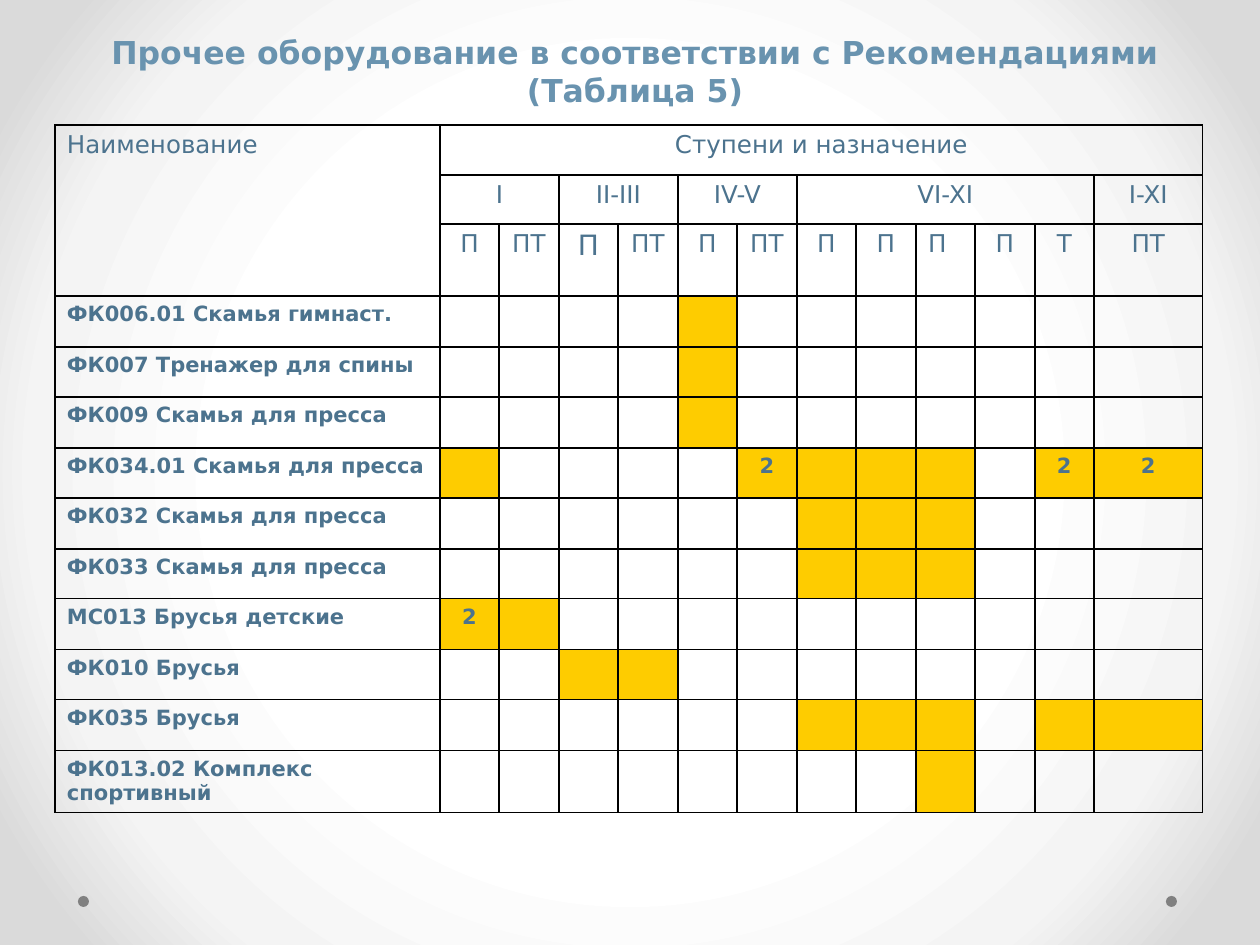
import pptx
import pptx.util
import pptx.dml.color
import pptx.enum.shapes
import pptx.enum.text
import pptx.oxml
from lxml import etree

NS = "http://schemas.openxmlformats.org/drawingml/2006/main"
FONT = "DejaVu Sans"
INK = "4C738E"
GOLD = "FECC00"
COLS = [385] + [59, 60] * 5 + [59, 109]
ROWS = [50, 49, 72] + [51, 50] * 4 + [51, 62]
STAGES = [("I", 1, 2), ("II-III", 3, 4), ("IV-V", 5, 6),
          ("VI-XI", 7, 11), ("I-XI", 12, 12)]
KINDS = ["П", "ПТ", "П", "ПТ", "П", "ПТ", "П", "П", "П", "П", "Т", "ПТ"]
ITEMS = [
    ("ФК006.01 Скамья гимнаст.", "....x......."),
    ("ФК007 Тренажер для спины", "....x......."),
    ("ФК009 Скамья для пресса", "....x......."),
    ("ФК034.01 Скамья для пресса", "x....2xxx.22"),
    ("ФК032 Скамья для пресса", "......xxx..."),
    ("ФК033 Скамья для пресса", "......xxx..."),
    ("МС013 Брусья детские", "2x.........."),
    ("ФК010 Брусья", "..xx........"),
    ("ФК035 Брусья", "......xxx.xx"),
    ("ФК013.02 Комплекс спортивный", "........x..."),
]


def px(n):
    return pptx.util.Emu(round(n * 914400 / 126))


def tint(code):
    return pptx.dml.color.RGBColor.from_string(code)


def write(frame, text, size, bold=False, mid=True, ink=INK):
    para = frame.paragraphs[0]
    align = pptx.enum.text.PP_ALIGN
    para.alignment = align.CENTER if mid else align.LEFT
    run = para.add_run()
    run.text = text
    run.font.name = FONT
    run.font.size = pptx.util.Pt(size)
    run.font.bold = bold
    run.font.color.rgb = tint(ink)


def paint(slide):
    slide.background.fill.gradient()
    grad = slide.background.fill._fill._gradFill
    for child in list(grad):
        grad.remove(child)
    stops = etree.SubElement(grad, f"{{{NS}}}gsLst")
    for pos, code in [(50, "FFFFFF"), (76, "F4F4F4"), (92, "DADADA")]:
        stop = etree.SubElement(stops, f"{{{NS}}}gs", pos=str(pos * 1000))
        etree.SubElement(stop, f"{{{NS}}}srgbClr", val=code)
    shade = etree.SubElement(grad, f"{{{NS}}}path", {"path": "circle"})
    sides = dict.fromkeys("ltrb", "50000")
    etree.SubElement(shade, f"{{{NS}}}fillToRect", sides)


def dot(slide, left):
    kind = pptx.enum.shapes.MSO_SHAPE.OVAL
    shape = slide.shapes.add_shape(kind, px(left), px(896), px(11), px(11))
    shape.shadow.inherit = False
    shape.fill.solid()
    shape.fill.fore_color.rgb = tint("808080")
    shape.line.fill.background()


def head(slide):
    title = slide.shapes.title
    title.left, title.top = px(64), px(26)
    title.width, title.height = px(1142), px(90)
    frame = title.text_frame
    frame.word_wrap = True
    frame.auto_size = pptx.enum.text.MSO_AUTO_SIZE.NONE
    frame.vertical_anchor = pptx.enum.text.MSO_ANCHOR.MIDDLE
    write(frame, "Прочее оборудование в соответствии с Рекомендациями (Таблица 5)",
          18, bold=True, ink="6993AF")


def edge(cell):
    props = cell._tc.get_or_add_tcPr()
    for i, side in enumerate(["lnL", "lnR", "lnT", "lnB"]):
        line = pptx.oxml.parse_xml(
            f'<a:{side} xmlns:a="{NS}" w="12700"><a:solidFill>'
            f'<a:srgbClr val="000000"/></a:solidFill></a:{side}>')
        props.insert(i, line)


def blank(cell, first):
    if first:
        cell.margin_left = cell.margin_right = px(12)
    else:
        cell.margin_left = cell.margin_right = px(4)
    cell.margin_top = cell.margin_bottom = px(6)
    cell.fill.background()
    edge(cell)


def mark(cell, sign):
    if sign != ".":
        cell.fill.solid()
        cell.fill.fore_color.rgb = tint(GOLD)
    if sign == "2":
        write(cell.text_frame, sign, 12, bold=True)
    else:
        cell.margin_top = cell.margin_bottom = 0


def grid(slide):
    frame = slide.shapes.add_table(len(ROWS), len(COLS), px(55), px(125),
                                   px(sum(COLS)), px(sum(ROWS)))
    table = frame.table
    table.first_row = table.horz_banding = False
    for col, width in zip(table.columns, COLS):
        col.width = px(width)
    for row, height in zip(table.rows, ROWS):
        row.height = px(height)
        for i, cell in enumerate(row.cells):
            blank(cell, i == 0)
    return table


def top(table):
    name = table.cell(0, 0)
    name.merge(table.cell(2, 0))
    write(name.text_frame, "Наименование", 14, mid=False)
    span = table.cell(0, 1)
    span.merge(table.cell(0, 12))
    write(span.text_frame, "Ступени и назначение", 14)
    for text, start, end in STAGES:
        cell = table.cell(1, start)
        if end > start:
            cell.merge(table.cell(1, end))
        write(cell.text_frame, text, 14)
    for i, text in enumerate(KINDS, 1):
        write(table.cell(2, i).text_frame, text, 16 if i == 3 else 14)
    table.cell(2, 9).margin_right = px(20)


def body(table):
    for r, (name, signs) in enumerate(ITEMS, 3):
        write(table.cell(r, 0).text_frame, name, 12, bold=True, mid=False)
        for c, sign in enumerate(signs, 1):
            mark(table.cell(r, c), sign)


def main():
    deck = pptx.Presentation()
    deck.slide_width, deck.slide_height = px(1260), px(945)
    slide = deck.slides.add_slide(deck.slide_layouts[5])
    paint(slide)
    for left in (1166, 78):
        dot(slide, left)
    head(slide)
    table = grid(slide)
    top(table)
    body(table)
    deck.save("out.pptx")


if __name__ == "__main__":
    main()
